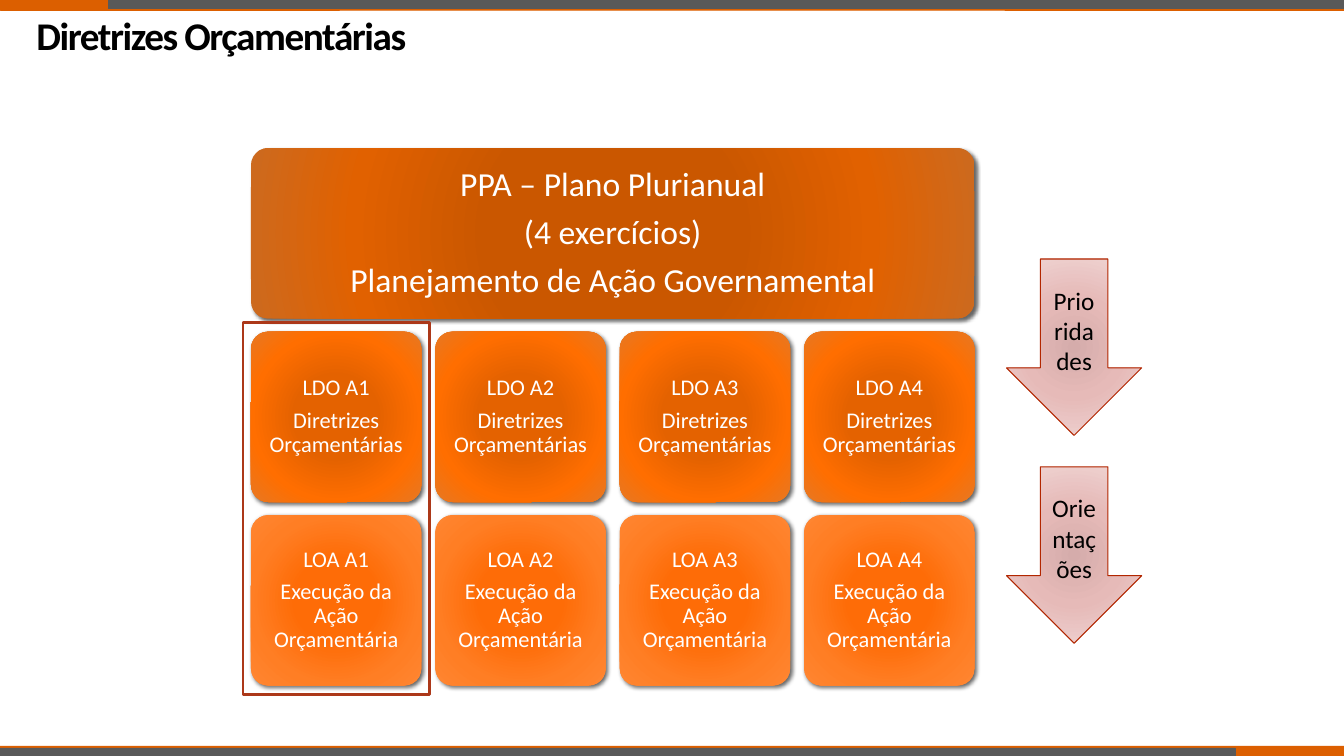
import pptx
import pptx.dml.color
import pptx.enum.shapes
import pptx.enum.text
import pptx.oxml
import pptx.oxml.ns
import pptx.util

Pt = pptx.util.Pt
RGBColor = pptx.dml.color.RGBColor
SHAPE = pptx.enum.shapes.MSO_SHAPE
ALIGN = pptx.enum.text.PP_ALIGN
MIDDLE = pptx.enum.text.MSO_ANCHOR.MIDDLE

FONT = "Calibri"
BLACK = RGBColor(0x00, 0x00, 0x00)
WHITE = RGBColor(0xFF, 0xFF, 0xFF)
ORANGE = RGBColor(0xDC, 0x5F, 0x00)
GRAY = RGBColor(0x59, 0x59, 0x59)
ARROW_EDGE = RGBColor(0xB2, 0x26, 0x00)
FRAME_EDGE = RGBColor(0xAC, 0x38, 0x19)


def ramp(*stops):
    return [(position, RGBColor.from_string(color)) for position, color in stops]


PPA_RAMP = ramp((0, "CA5700"), (34, "CA5700"), (70, "E16100"), (100, "CC6A1F"))
LDO_RAMP = ramp((0, "E46200"), (34, "E46200"), (70, "FF6E00"), (100, "E77823"))
LOA_RAMP = ramp((0, "FF6C06"), (34, "FE6C07"), (70, "FF7E24"), (100, "FF8632"))
ARROW_RAMP = ramp((0, "D5ACAB"), (45, "E6BAB8"), (100, "F1D9D8"))

SLIDE_WIDTH, SLIDE_HEIGHT = 960, 540
CARD = 121.7
COLUMN_GAP, ROW_GAP = 10, 9.4
YEARS = 4


def add_box(slide, kind, left, top, width, height):
    box = slide.shapes.add_shape(kind, Pt(left), Pt(top), Pt(width), Pt(height))
    box.shadow.inherit = False
    return box


def fill_radial(shape, stops):
    shape.fill.gradient()
    gradient = shape._element.spPr.find(pptx.oxml.ns.qn("a:gradFill"))
    for child in list(gradient):
        gradient.remove(child)
    namespace = pptx.oxml.ns.nsdecls("a")
    marks = "".join(
        f'<a:gs pos="{position * 1000}"><a:srgbClr val="{color}"/></a:gs>'
        for position, color in stops
    )
    gradient.append(pptx.oxml.parse_xml(f"<a:gsLst {namespace}>{marks}</a:gsLst>"))
    gradient.append(pptx.oxml.parse_xml(
        f'<a:path {namespace} path="circle">'
        '<a:fillToRect l="100000" t="100000" r="100000" b="100000"/></a:path>'
    ))


def cast_shadow(shape):
    effects = shape._element.spPr.find(pptx.oxml.ns.qn("a:effectLst"))
    effects.append(pptx.oxml.parse_xml(
        f'<a:outerShdw {pptx.oxml.ns.nsdecls("a")} blurRad="{Pt(3)}" dist="{Pt(2)}" '
        'dir="2700000" rotWithShape="0"><a:srgbClr val="000000">'
        '<a:alpha val="60000"/></a:srgbClr></a:outerShdw>'
    ))


def write(frame, text, size, color, align=ALIGN.CENTER):
    frame.text = text
    frame.word_wrap = True
    frame.vertical_anchor = MIDDLE
    for paragraph in frame.paragraphs:
        paragraph.alignment = align
        for run in paragraph.runs:
            run.font.name = FONT
            run.font.size = Pt(size)
            run.font.color.rgb = color


def add_bar(slide, left, top, width, height, color):
    bar = add_box(slide, SHAPE.RECTANGLE, left, top, width, height)
    bar.fill.solid()
    bar.fill.fore_color.rgb = color
    bar.line.color.rgb = color
    bar.line.width = Pt(0.25)


def add_bands(slide, width, height):
    thick, thin, accent = 7.2, 5.8, 77.6
    add_bar(slide, 0, height - thick, width, thick, ORANGE)
    add_bar(slide, 0, height - thin, width - accent, thin, GRAY)
    add_bar(slide, 0, 0, width, thick, ORANGE)
    add_bar(slide, accent, 0, width - accent, thin, GRAY)


def place_title(slide, left, top, width, height):
    title = slide.shapes.title
    title.left, title.top = Pt(left), Pt(top)
    title.width, title.height = Pt(width), Pt(height)
    write(title.text_frame, "Diretrizes Orçamentárias", 28, BLACK, ALIGN.LEFT)
    title_run = title.text_frame.paragraphs[0].runs[0]
    title_run.font.bold = True
    title_run._r.get_or_add_rPr().set("spc", "-100")


def add_card(slide, left, top, width, text, size, margin, stops):
    card = add_box(slide, SHAPE.ROUNDED_RECTANGLE, left, top, width, CARD)
    card.adjustments[0] = 0.1
    fill_radial(card, stops)
    card.line.fill.background()
    cast_shadow(card)
    frame = card.text_frame
    frame.margin_left = frame.margin_right = Pt(margin)
    frame.margin_top = frame.margin_bottom = Pt(margin)
    write(frame, text, size, WHITE)
    for paragraph in frame.paragraphs:
        paragraph.line_spacing = 0.9
        paragraph.space_after = Pt(size * 0.35)


def add_plan(slide, left, top):
    column_step, row_step = CARD + COLUMN_GAP, CARD + ROW_GAP
    plan_width = YEARS * column_step - COLUMN_GAP
    ppa = "PPA – Plano Plurianual\n(4 exercícios)\nPlanejamento de Ação Governamental"
    add_card(slide, left, top, plan_width, ppa, 24, 7.2, PPA_RAMP)
    levels = [
        ("LDO", "Diretrizes Orçamentárias", LDO_RAMP),
        ("LOA", "Execução da Ação Orçamentária", LOA_RAMP),
    ]
    for year in range(YEARS):
        for row, (law, purpose, stops) in enumerate(levels, start=1):
            add_card(slide, left + year * column_step, top + row * row_step, CARD,
                     f"{law} A{year + 1}\n{purpose}", 16, 4.8, stops)


def add_arrows(slide, left, top):
    for index, effect in enumerate(["Prioridades", "Orientações"]):
        arrow = add_box(slide, SHAPE.DOWN_ARROW, left, top + index * 148.4, 96.5, 126)
        fill_radial(arrow, ARROW_RAMP)
        arrow.line.color.rgb = ARROW_EDGE
        arrow.line.width = Pt(0.75)
        write(arrow.text_frame, effect, 18, BLACK)


def add_year_frame(slide, left, top, width, height):
    year_frame = add_box(slide, SHAPE.RECTANGLE, left, top, width, height)
    year_frame.fill.background()
    year_frame.line.color.rgb = FRAME_EDGE
    year_frame.line.width = Pt(2.08)


def main():
    presentation = pptx.Presentation()
    presentation.slide_width = Pt(SLIDE_WIDTH)
    presentation.slide_height = Pt(SLIDE_HEIGHT)
    slide = presentation.slides.add_slide(presentation.slide_layouts[5])
    add_bands(slide, SLIDE_WIDTH, SLIDE_HEIGHT)
    place_title(slide, 18.7, 7.2, 922.3, 36)
    add_plan(slide, 179.3, 105.8)
    add_arrows(slide, 719, 185)
    add_year_frame(slide, 173.6, 230.3, 133.2, 265.7)
    presentation.save("out.pptx")


if __name__ == "__main__":
    main()
